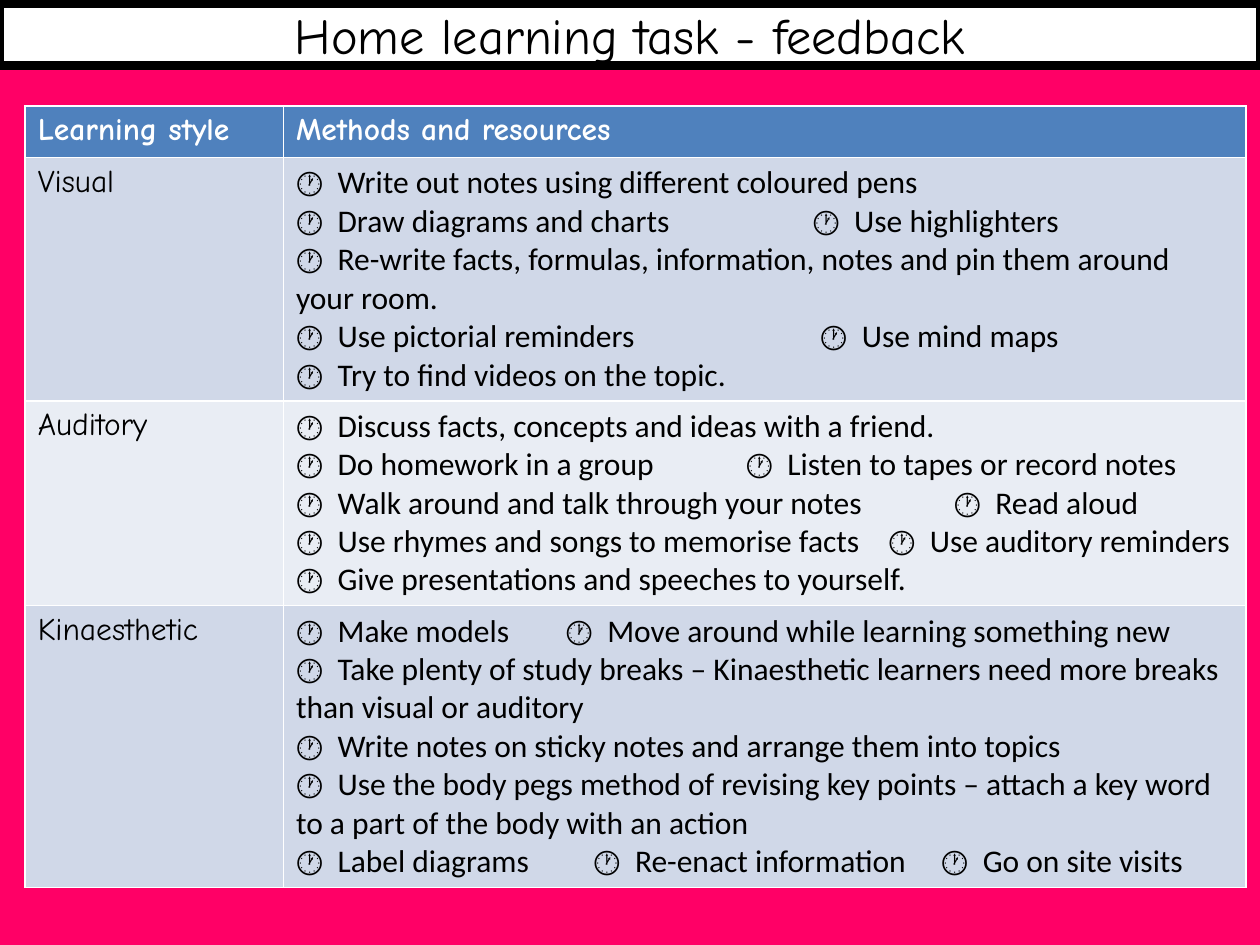
from lxml.etree import SubElement
from pptx import Presentation
from pptx.dml.color import RGBColor
from pptx.enum.text import MSO_ANCHOR, MSO_AUTO_SIZE, PP_ALIGN
from pptx.oxml.ns import qn
from pptx.util import Inches, Pt

PINK = RGBColor(0xFF, 0x00, 0x66)
WHITE = RGBColor(0xFF, 0xFF, 0xFF)
BLACK = RGBColor(0x00, 0x00, 0x00)
BLUE = RGBColor(0x4F, 0x81, 0xBD)
BANDS = [RGBColor(0xD0, 0xD8, 0xE8), RGBColor(0xE9, 0xED, 0xF4)]

HAND_FONT = "Comic Neue"
LIST_FONT = "Calibri"
CLOCK = "🕐"
CLOCK_GAP = 0.33  # inches from a clock to its words
HEADER_HEIGHT = 0.41
LINE_HEIGHT = 0.305
CELL_PADDING = 0.1
COLUMN_WIDTHS = [2.05, 7.64]
HEADINGS = ["Learning style", "Methods and resources"]

# Style, lines drawn, then one list of (start in inches, words) per paragraph
STYLES = [
    ("Visual", 6, [
        [(0, "Write out notes using different coloured pens")],
        [(0, "Draw diagrams and charts"), (4.1, "Use highlighters")],
        [(0, "Re-write facts, formulas, information, notes and pin them around your room.")],
        [(0, "Use pictorial reminders"), (4.16, "Use mind maps")],
        [(0, "Try to find videos on the topic.")],
    ]),
    ("Auditory", 5, [
        [(0, "Discuss facts, concepts and ideas with a friend.")],
        [(0, "Do homework in a group"), (3.57, "Listen to tapes or record notes")],
        [(0, "Walk around and talk through your notes"), (5.22, "Read aloud")],
        [(0, "Use rhymes and songs to memorise facts"), (4.7, "Use auditory reminders")],
        [(0, "Give presentations and speeches to yourself.")],
    ]),
    ("Kinaesthetic", 7, [
        [(0, "Make models"), (2.14, "Move around while learning something new")],
        [(0, "Take plenty of study breaks – Kinaesthetic learners need more breaks "
             "than visual or auditory")],
        [(0, "Write notes on sticky notes and arrange them into topics")],
        [(0, "Use the body pegs method of revising key points – attach a key word "
             "to a part of the body with an action")],
        [(0, "Label diagrams"), (2.36, "Re-enact information"), (5.12, "Go on site visits")],
    ]),
]


def format_text(frame, font, size, color, bold=False):
    for para in frame.paragraphs:
        for span in para.runs:
            span.font.name = font
            span.font.size = Pt(size)
            span.font.color.rgb = color
            span.font.bold = bold


def set_tab_stops(para, stops):
    tab_list = SubElement(para._p.get_or_add_pPr(), qn("a:tabLst"))
    for stop in stops:
        SubElement(tab_list, qn("a:tab"), pos=str(Inches(stop)), algn="l")


def add_title(page, width, text):
    title = page.shapes.title
    title.left, title.top = 0, Inches(0.03)
    title.width, title.height = width, Inches(0.49)
    title.fill.solid()
    title.fill.fore_color.rgb = WHITE
    title.line.color.rgb = BLACK
    title.line.width = Pt(5)
    frame = title.text_frame
    frame.text = text
    frame.auto_size = MSO_AUTO_SIZE.NONE
    frame.vertical_anchor = MSO_ANCHOR.MIDDLE
    frame.paragraphs[0].alignment = PP_ALIGN.CENTER
    format_text(frame, HAND_FONT, 28.8, BLACK)


def fill_cell(cell, text, fill, font, color, bold=False):
    cell.fill.solid()
    cell.fill.fore_color.rgb = fill
    cell.text_frame.text = text
    format_text(cell.text_frame, font, 18, color, bold)


def fill_methods(cell, methods, fill):
    lines = ["\t".join(f"{CLOCK}\t{words}" for _, words in items) for items in methods]
    fill_cell(cell, "\n".join(lines), fill, LIST_FONT, BLACK)
    for para, items in zip(cell.text_frame.paragraphs, methods):
        starts = [start for start, _ in items]
        stops = [stop for start in starts for stop in (start, start + CLOCK_GAP)]
        set_tab_stops(para, stops[1:])


def add_styles_table(page):
    heights = [HEADER_HEIGHT] + [
        lines * LINE_HEIGHT + CELL_PADDING for _, lines, _ in STYLES]
    table = page.shapes.add_table(
        len(heights), len(COLUMN_WIDTHS), Inches(0.2), Inches(0.84),
        Inches(sum(COLUMN_WIDTHS)), Inches(sum(heights))).table
    for column, width in zip(table.columns, COLUMN_WIDTHS):
        column.width = Inches(width)
    for row, height in zip(table.rows, heights):
        row.height = Inches(height)

    # Header row
    for index, heading in enumerate(HEADINGS):
        fill_cell(table.cell(0, index), heading, BLUE, HAND_FONT, WHITE, bold=True)

    # One banded row for each learning style
    for index, (style, _, methods) in enumerate(STYLES):
        band = BANDS[index % len(BANDS)]
        fill_cell(table.cell(index + 1, 0), style, band, HAND_FONT, BLACK)
        fill_methods(table.cell(index + 1, 1), methods, band)


def main():
    deck = Presentation()
    deck.slide_width, deck.slide_height = Inches(10), Inches(7.5)
    page = deck.slides.add_slide(deck.slide_layouts[5])
    page.background.fill.solid()
    page.background.fill.fore_color.rgb = PINK
    add_title(page, deck.slide_width, "Home learning task - feedback")
    add_styles_table(page)
    deck.save("out.pptx")


if __name__ == "__main__":
    main()
